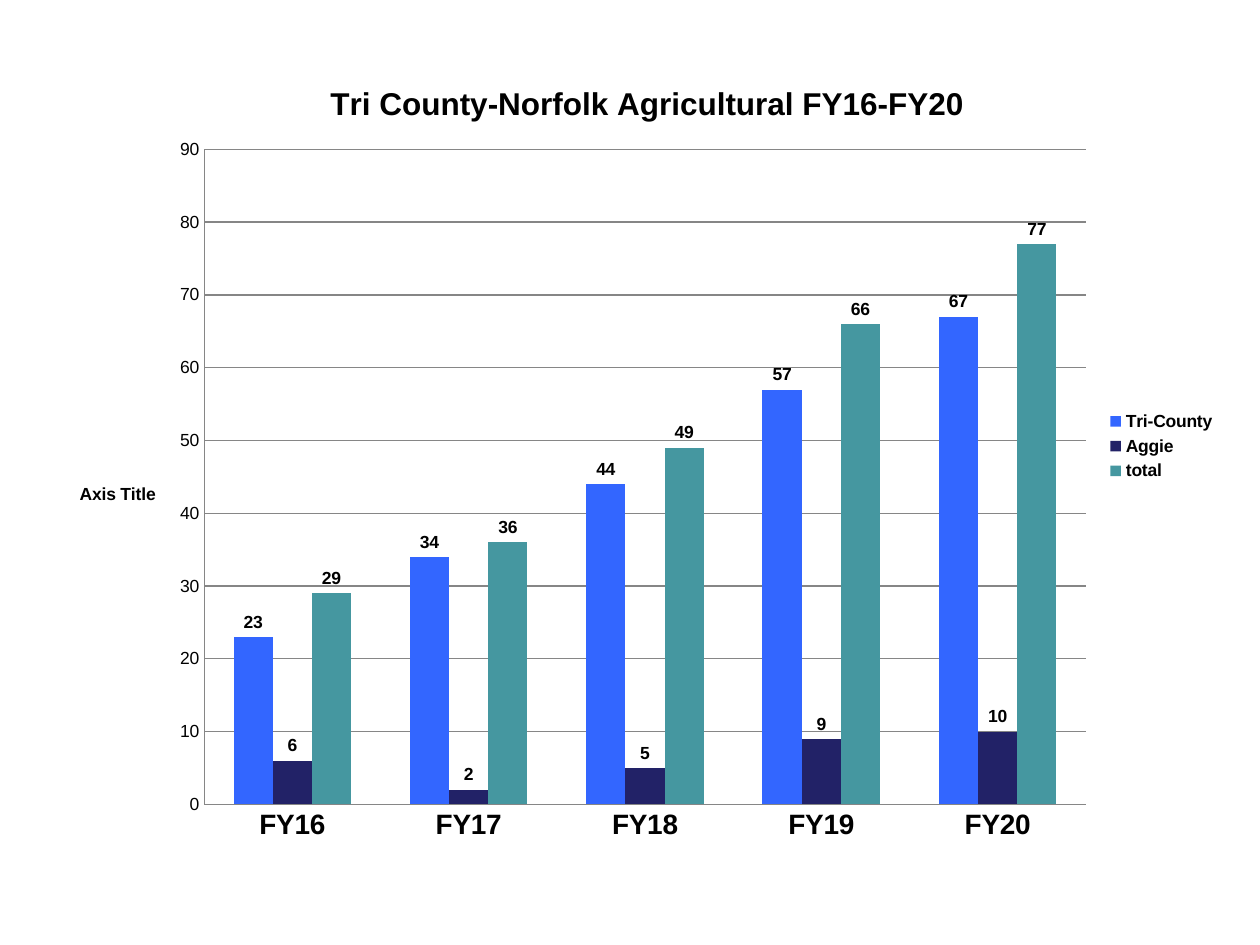
import pptx
import pptx.chart.data
import pptx.dml.color
import pptx.enum.chart
import pptx.util
from lxml import etree

Inches, Pt = pptx.util.Inches, pptx.util.Pt
kinds = pptx.enum.chart

YEARS = ["FY16", "FY17", "FY18", "FY19", "FY20"]
SERIES = [
    ("Tri-County", "3366FF", [23, 34, 44, 57, 67]),
    ("Aggie", "222267", [6, 2, 5, 9, 10]),
    ("total", "4597A0", [29, 36, 49, 66, 77]),
]


def color(code):
    return pptx.dml.color.RGBColor.from_string(code)


def place(node, inner=False, **spots):
    """Give a chart part a fixed spot, in fractions of the chart."""
    space = node.nsmap["c"]
    for old in node.findall(f"{{{space}}}layout"):
        node.remove(old)
    layout = etree.Element(f"{{{space}}}layout")
    manual = etree.SubElement(layout, f"{{{space}}}manualLayout")
    modes = {"layoutTarget": "inner"} if inner else {}
    modes.update(xMode="edge", yMode="edge")
    for tag, value in {**modes, **spots}.items():
        etree.SubElement(manual, f"{{{space}}}{tag}").set("val", str(value))
    cover = node.find(f"{{{space}}}overlay")
    if cover is None:
        node.insert(0, layout)
    else:
        cover.addprevious(layout)


class Deck:
    face = "Arial"
    ink = "000000"
    grid = "868686"

    def __init__(self):
        self.show = pptx.Presentation()
        self.show.slide_width = Inches(10)
        self.show.slide_height = Inches(7.5)
        self.slide = self.show.slides.add_slide(self.show.slide_layouts[6])

    def style(self, font, size=10, bold=False):
        values = {"name": self.face, "size": Pt(size), "bold": bold}
        for key, value in values.items():
            setattr(font, key, value)
        font.color.rgb = color(self.ink)

    def title(self, owner, text, size):
        """Title a chart or an axis, with level text."""
        title = owner.chart_title if hasattr(owner, "chart_title") else owner.axis_title
        frame = title.text_frame
        frame.text = text
        self.style(frame.paragraphs[0].runs[0].font, size, True)
        body = title.text_frame._txBody.bodyPr
        body.set("rot", "0")
        body.set("vert", "horz")

    def line(self, form):
        form.line.color.rgb = color(self.grid)
        form.line.width = Pt(0.75)

    def axes(self, chart):
        for axis, size, bold in (
            (chart.category_axis, 16, True),
            (chart.value_axis, 10, False),
        ):
            axis.major_tick_mark = kinds.XL_TICK_MARK.NONE
            axis.minor_tick_mark = kinds.XL_TICK_MARK.NONE
            self.style(axis.tick_labels.font, size, bold)
            self.line(axis.format)
        scale = chart.value_axis
        scale.minimum_scale, scale.maximum_scale, scale.major_unit = 0, 90, 10
        scale.has_major_gridlines = True
        self.line(scale.major_gridlines.format)
        self.title(scale, "Axis Title", 10)

    def bars(self, chart):
        plot = chart.plots[0]
        plot.gap_width, plot.overlap, plot.vary_by_categories = 150, 0, False
        for series, (_, code, _) in zip(plot.series, SERIES):
            series.format.fill.solid()
            series.format.fill.fore_color.rgb = color(code)
            labels = series.data_labels
            labels.show_value = True
            labels.position = kinds.XL_LABEL_POSITION.OUTSIDE_END
            self.style(labels.font, bold=True)

    def legend(self, chart):
        chart.has_legend = True
        chart.legend.position = kinds.XL_LEGEND_POSITION.RIGHT
        chart.legend.include_in_layout = False
        self.style(chart.legend.font, bold=True)

    def chart(self, text, left, top, width, height):
        data = pptx.chart.data.CategoryChartData()
        data.categories = YEARS
        for name, _, values in SERIES:
            data.add_series(name, values)
        chart = self.slide.shapes.add_chart(
            kinds.XL_CHART_TYPE.COLUMN_CLUSTERED,
            Inches(left), Inches(top), Inches(width), Inches(height), data,
        ).chart
        self.style(chart.font)
        self.title(chart, text, 18)
        self.axes(chart)
        self.bars(chart)
        self.legend(chart)
        return chart


def main():
    deck = Deck()
    chart = deck.chart("Tri County-Norfolk Agricultural FY16-FY20", 0.42, 0.42, 9.38, 6.38)
    root = chart.element
    place(root.xpath(".//c:plotArea")[0], inner=True, x=0.128, y=0.12, w=0.746, h=0.815)
    place(root.xpath("./c:chart/c:title")[0], x=0.23, y=0.03)
    place(root.xpath(".//c:valAx/c:title")[0], x=0.02, y=0.53)
    place(root.xpath(".//c:legend")[0], x=0.89, y=0.44)
    deck.show.save("out.pptx")


if __name__ == "__main__":
    main()
